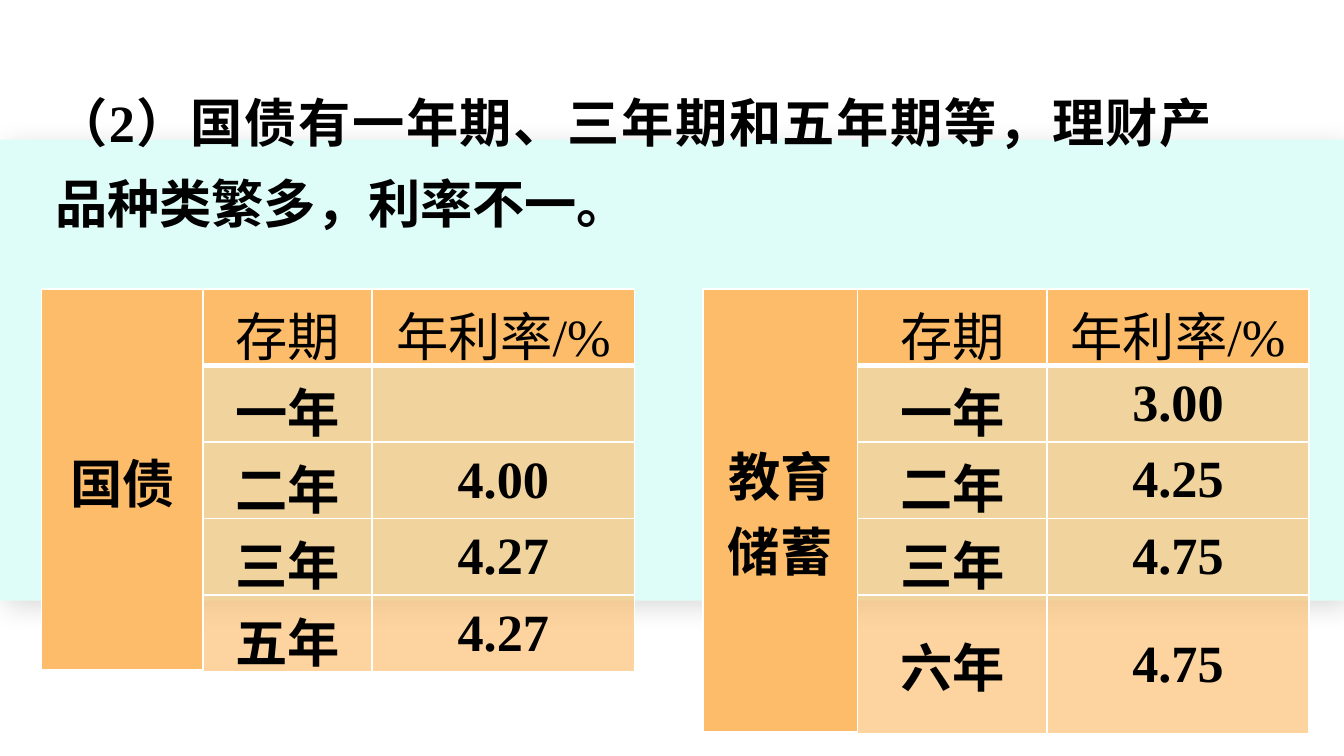
from lxml.etree import SubElement
from pptx import Presentation
from pptx.dml.color import RGBColor
from pptx.enum.shapes import MSO_SHAPE
from pptx.enum.text import MSO_ANCHOR, MSO_AUTO_SIZE, PP_ALIGN
from pptx.oxml.ns import qn
from pptx.util import Inches, Pt

THEME = {
    "band": RGBColor.from_string("DEFDF8"),
    "cell": RGBColor.from_string("FCBC69"),
    "text": RGBColor.from_string("000000"),
    "border": "FFFFFF",
    "shadow": "000000",
    "size": Pt(28),
    "latin": "Times New Roman",
    "cjk": "Noto Sans CJK SC",
}


def add_run(p, text, **extra):
    r = p.add_run()
    r.text = text
    font = {"size": THEME["size"], "bold": True, "name": THEME["latin"], **extra}
    for name, value in font.items():
        setattr(r.font, name, value)
    r.font.color.rgb = THEME["text"]
    SubElement(r.font._element, qn("a:ea"), typeface=THEME["cjk"])


def format_cell(cell, widths, alpha=None):
    tcPr = cell._tc.get_or_add_tcPr()
    for side, width in zip("LRTB", widths):
        ln = SubElement(tcPr, qn(f"a:ln{side}"), w=str(Pt(width)))
        fill = SubElement(ln, qn("a:solidFill"))
        SubElement(fill, qn("a:srgbClr"), val=THEME["border"])
    cell.fill.solid()
    cell.fill.fore_color.rgb = THEME["cell"]
    if alpha:
        color = tcPr.find(qn("a:solidFill")).find(qn("a:srgbClr"))
        SubElement(color, qn("a:alpha"), val=str(alpha * 1000))
    cell.vertical_anchor = MSO_ANCHOR.MIDDLE
    cell.text_frame.paragraphs[0].alignment = PP_ALIGN.CENTER


prs = Presentation()
prs.slide_width, prs.slide_height = Inches(10), Inches(10 * 9 / 16)
s = prs.slides.add_slide(prs.slide_layouts[5])

band = s.shapes.add_shape(
    MSO_SHAPE.RECTANGLE, 0, Inches(1.04), prs.slide_width, Inches(3.43))
band.fill.solid()
band.fill.fore_color.rgb = THEME["band"]
band.line.fill.background()
band.shadow.inherit = False
effects = band._element.spPr.find(qn("a:effectLst"))
shadow = SubElement(effects, qn("a:outerShdw"), blurRad=str(Pt(15)),
                    dist=str(Pt(5)), dir=str(45 * 60000), rotWithShape="0")
color = SubElement(shadow, qn("a:srgbClr"), val=THEME["shadow"])
SubElement(color, qn("a:alpha"), val="15000")
s.shapes._spTree.insert(2, band._element)

title = s.shapes.title
box = {"left": 0.31, "top": 0.48, "width": 8.81, "height": 1.32}
for name, value in box.items():
    setattr(title, name, Inches(value))
tf = title.text_frame
frame = {"word_wrap": True, "vertical_anchor": MSO_ANCHOR.TOP,
         "auto_size": MSO_AUTO_SIZE.SHAPE_TO_FIT_TEXT}
for name, value in frame.items():
    setattr(tf, name, value)
p = tf.paragraphs[0]
p.alignment = PP_ALIGN.JUSTIFY
p.line_spacing = 1.3
add_run(p, "（2）国债有一年期、三年期和五年期等，理财产品种类繁多，利率不一。")

tables = [
    {"name": "国债", "left": 0.31, "cols": [1.2, 1.26, 1.95], "head": 0.57,
     "rates": [("一年", ""), ("二年", "4.00"), ("三年", "4.27"), ("五年", "4.27")]},
    {"name": "教育储蓄", "left": 5.23, "cols": [1.15, 1.41, 1.95], "head": 0.48,
     "rates": [("一年", "3.00"), ("二年", "4.25"), ("三年", "4.75"), ("六年", "4.75")]},
]
for data in tables:
    heights = [data["head"]] + [0.57] * len(data["rates"])
    table = s.shapes.add_table(
        len(heights), 3, Inches(data["left"]), Inches(2.15),
        Inches(sum(data["cols"])), Inches(2.83)).table
    for col, width in zip(table.columns, data["cols"]):
        col.width = Inches(width)
    for row, height in zip(table.rows, heights):
        row.height = Inches(height)

    for i in range(len(heights)):
        for j in range(3):
            widths = (1, 1, 1, 3) if i == 0 else (1, 1, 3 if i == 1 else 1, 1)
            format_cell(table.cell(i, j), widths, alpha=63 if i and j else None)

    name = table.cell(0, 0)
    name.merge(table.cell(len(heights) - 1, 0))
    add_run(name.text_frame.paragraphs[0], data["name"])
    add_run(table.cell(0, 1).text_frame.paragraphs[0], "存期",
            bold=False, name=THEME["cjk"])
    p = table.cell(0, 2).text_frame.paragraphs[0]
    add_run(p, "年利率", bold=False, name=THEME["cjk"])
    add_run(p, "/%", bold=False)
    for i, rate in enumerate(data["rates"], 1):
        for j, text in enumerate(rate, 1):
            if text:
                add_run(table.cell(i, j).text_frame.paragraphs[0], text)

prs.save("out.pptx")
